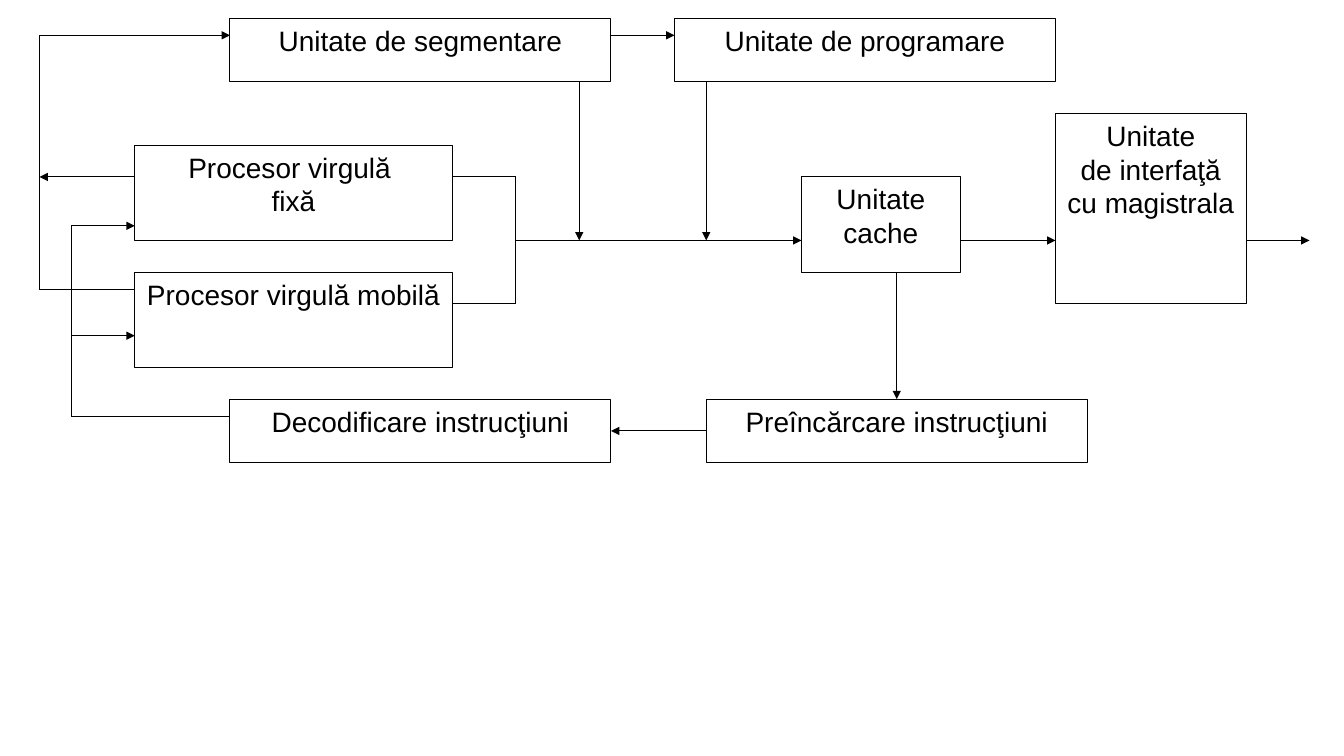
from pptx import Presentation
from pptx.dml.color import RGBColor
from pptx.enum.shapes import MSO_CONNECTOR as Connector, MSO_SHAPE as Shape
from pptx.enum.text import MSO_ANCHOR as Anchor, PP_ALIGN as Align
from pptx.oxml.ns import qn
from pptx.util import Pt
from lxml.etree import SubElement

LEFT, TOP, STEP = 28.2, 13, 22.68
BLACK, WHITE = "000000", "FFFFFF"

UNITS = [
    ("Unitate de segmentare", 6, 0, 12, 2),
    ("Unitate de programare", 20, 0, 12, 2),
    ("Procesor virgulă \nfixă", 3, 4, 10, 3),
    ("Procesor virgulă mobilă", 3, 8, 10, 3),
    ("Unitate cache", 24, 5, 5, 3),
    ("Decodificare instrucţiuni", 6, 12, 12, 2),
    ("Preîncărcare instrucţiuni", 21, 12, 12, 2),
    ("Unitate\nde interfaţă cu magistrala", 32, 3, 6, 6),
]
LINES = [
    (13, 5, 15, 5),
    (13, 9, 15, 9),
    (15, 5, 15, 9),
    (1, 12.54, 6, 12.54),
    (1, 12.54, 1, 6.54),
    (0, 8.54, 3, 8.54),
    (0, 0.54, 0, 8.54),
]
ARROWS = [
    (15, 7, 24, 7),
    (29, 7, 32, 7),
    (38, 7, 40, 7),
    (17, 2, 17, 7),
    (21, 2, 21, 7),
    (18, 0.54, 20, 0.54),
    (27, 8, 27, 12),
    (21, 13, 18, 13),
    (1, 10, 3, 10),
    (1, 6.54, 3, 6.54),
    (3, 5, 0, 5),
    (0, 0.54, 6, 0.54),
]


def color(value):
    """Return the colour for a hex string."""
    return RGBColor.from_string(value)


def grid_point(column, row):
    """Return the slide position of a grid point."""
    return Pt(LEFT + column * STEP), Pt(TOP + row * STEP)


def style_line(line):
    """Give an outline or connector the thin black stroke."""
    line.color.rgb = color(BLACK)
    line.width = Pt(0.75)


def add_unit(slide, text, column, row, columns, rows):
    """Add a labelled block of the processor."""
    shape = slide.shapes.add_shape(
        Shape.RECTANGLE, *grid_point(column, row), Pt(columns * STEP), Pt(rows * STEP)
    )
    shape.shadow.inherit = False
    shape.fill.solid()
    shape.fill.fore_color.rgb = color(WHITE)
    style_line(shape.line)
    text_frame = shape.text_frame
    text_frame.word_wrap = True
    text_frame.vertical_anchor = Anchor.TOP
    text_frame.text = text
    for paragraph in text_frame.paragraphs:
        paragraph.alignment = Align.CENTER
        for run in paragraph.runs:
            run.font.name = "Arial"
            run.font.size = Pt(20)
            run.font.color.rgb = color(BLACK)


def add_line(slide, start_column, start_row, end_column, end_row, arrow=False):
    """Add a straight connection, with an arrowhead at its end if asked."""
    connector = slide.shapes.add_connector(
        Connector.STRAIGHT,
        *grid_point(start_column, start_row),
        *grid_point(end_column, end_row),
    )
    style_line(connector.line)
    properties = connector._element.spPr
    if arrow:
        SubElement(properties.find(qn("a:ln")), qn("a:tailEnd"), type="triangle")
    SubElement(properties, qn("a:effectLst"))


def main():
    """Build the block diagram and save it."""
    presentation = Presentation()
    presentation.slide_width = Pt(960)
    presentation.slide_height = Pt(540)
    slide = presentation.slides.add_slide(presentation.slide_layouts[6])
    for unit in UNITS:
        add_unit(slide, *unit)
    for line in LINES:
        add_line(slide, *line)
    for arrow in ARROWS:
        add_line(slide, *arrow, arrow=True)
    presentation.save("out.pptx")


if __name__ == "__main__":
    main()
